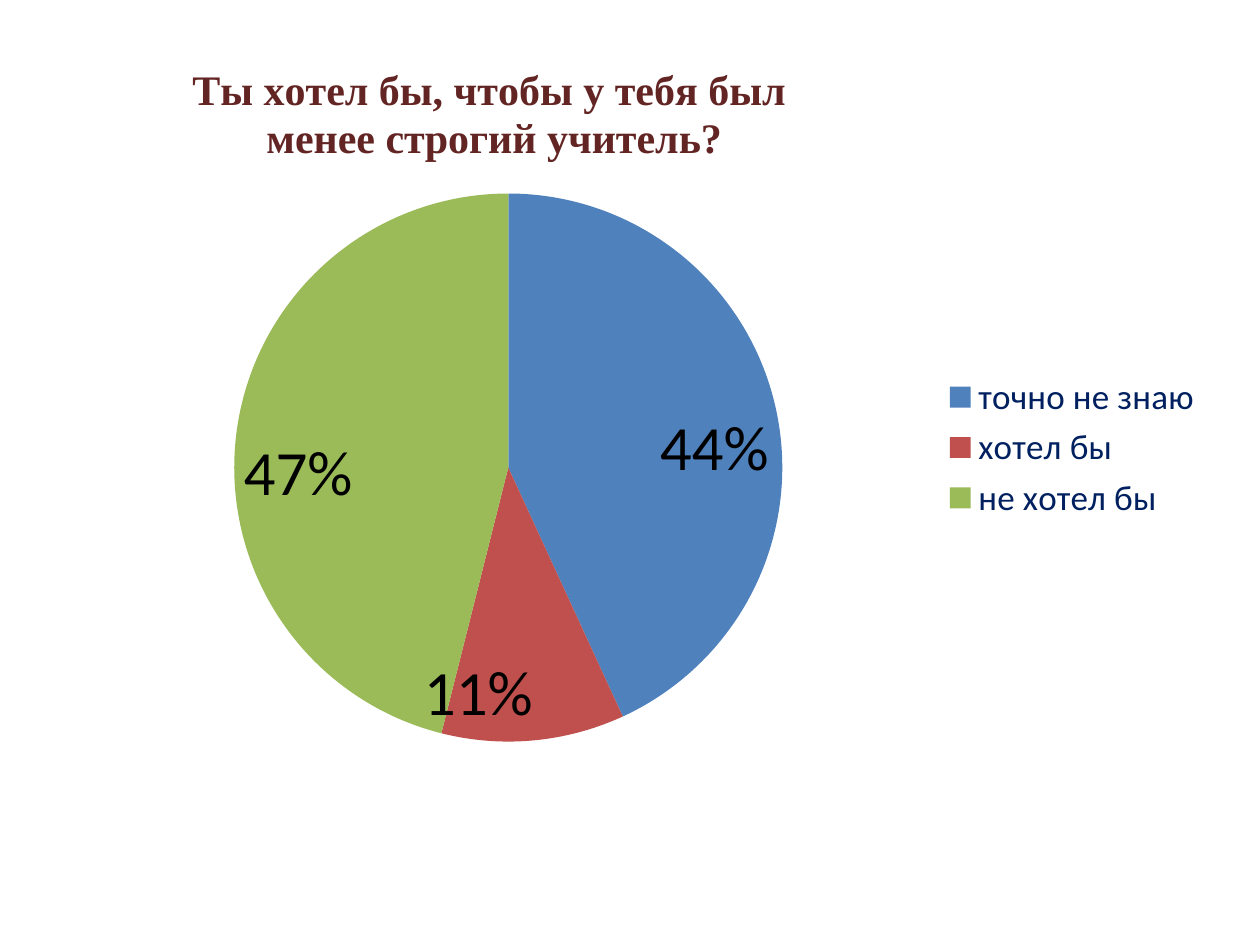
from dataclasses import dataclass

from lxml.etree import SubElement
from pptx import Presentation
from pptx.chart.data import CategoryChartData
from pptx.dml.color import RGBColor
from pptx.enum.chart import XL_CHART_TYPE, XL_LABEL_POSITION, XL_LEGEND_POSITION
from pptx.oxml import parse_xml
from pptx.oxml.ns import nsdecls, qn
from pptx.util import Pt


@dataclass(frozen=True)
class Theme:
    """Colours, fonts and type sizes of the slide."""
    body_font: str = "Calibri"
    title_font: str = "Times New Roman"
    text: str = "000000"
    title: str = "632523"
    legend: str = "002060"
    slices: tuple = ("4F81BD", "C0504D", "9BBB59")
    body_size: int = 18
    title_size: int = 24
    legend_size: int = 20
    label_size: int = 36


THEME = Theme()
QUESTION = "Ты хотел бы, чтобы у тебя был \nменее строгий учитель?"
ANSWERS = {"точно не знаю": 0.44, "хотел бы": 0.11, "не хотел бы": 0.47}


def style_font(font, name, size, color, bold=False):
    """Set the face, size, colour and weight of a font."""
    font.name = name
    font.size = Pt(size)
    font.bold = bold
    font.color.rgb = RGBColor.from_string(color)


def make_layout(**settings):
    """Return a manual chart layout with the given settings."""
    layout = parse_xml(f"<c:layout {nsdecls('c')}/>")
    manual = SubElement(layout, qn("c:manualLayout"))
    for name, value in settings.items():
        SubElement(manual, qn(f"c:{name}")).set("val", str(value))
    return layout


def replace_layout(parent, index, layout):
    """Put a layout at an index of a chart element in place of any other."""
    for old in parent.findall(qn("c:layout")):
        parent.remove(old)
    parent.insert(index, layout)


def format_title(chart):
    """Write the question above the pie."""
    frame = chart.chart_title.text_frame
    frame.text = QUESTION
    for para in frame.paragraphs:
        for span in para.runs:
            style_font(span.font, THEME.title_font, THEME.title_size, THEME.title, True)
    title = chart._chartSpace.chart.find(qn("c:title"))
    replace_layout(title, 1, make_layout(xMode="edge", yMode="edge", x=0.1, y=0.02))


def format_legend(chart):
    """Show the answers to the right of the pie."""
    chart.has_legend = True
    legend = chart.legend
    legend.position = XL_LEGEND_POSITION.RIGHT
    legend.include_in_layout = False
    style_font(legend.font, THEME.body_font, THEME.legend_size, THEME.legend)


def format_pie(chart):
    """Colour the slices, label them and place the plot."""
    plot = chart.plots[0]
    plot.vary_by_categories = True
    for index, color in enumerate(THEME.slices):
        fill = plot.series[0].points[index].format.fill
        fill.solid()
        fill.fore_color.rgb = RGBColor.from_string(color)
    labels = plot.series[0].data_labels
    labels.show_value = True
    labels.show_percentage = False
    labels.number_format = "0%"
    labels.number_format_is_linked = False
    labels.position = XL_LABEL_POSITION.INSIDE_END
    style_font(labels.font, THEME.body_font, THEME.label_size, THEME.text)
    layout = make_layout(layoutTarget="inner", xMode="edge", yMode="edge",
                         x=0.14, y=0.18, w=0.48, h=0.69)
    replace_layout(chart._chartSpace.chart.plotArea, 0, layout)


def add_survey_chart(page, left, top, width, height):
    """Place the survey pie chart in the given box."""
    data = CategoryChartData(number_format="0%")
    data.categories = list(ANSWERS)
    data.add_series("Series 1", list(ANSWERS.values()))
    box = page.shapes.add_chart(XL_CHART_TYPE.PIE, left, top, width, height, data)
    chart = box.chart
    style_font(chart.font, THEME.body_font, THEME.body_size, THEME.text)
    format_title(chart)
    format_legend(chart)
    format_pie(chart)


def main():
    """Build and save the deck."""
    deck = Presentation()
    deck.slide_width, deck.slide_height = Pt(720), Pt(540)
    page = deck.slides.add_slide(deck.slide_layouts[6])
    add_survey_chart(page, Pt(42.5), Pt(26), Pt(652.5), Pt(459.5))
    deck.save("out.pptx")


if __name__ == "__main__":
    main()
